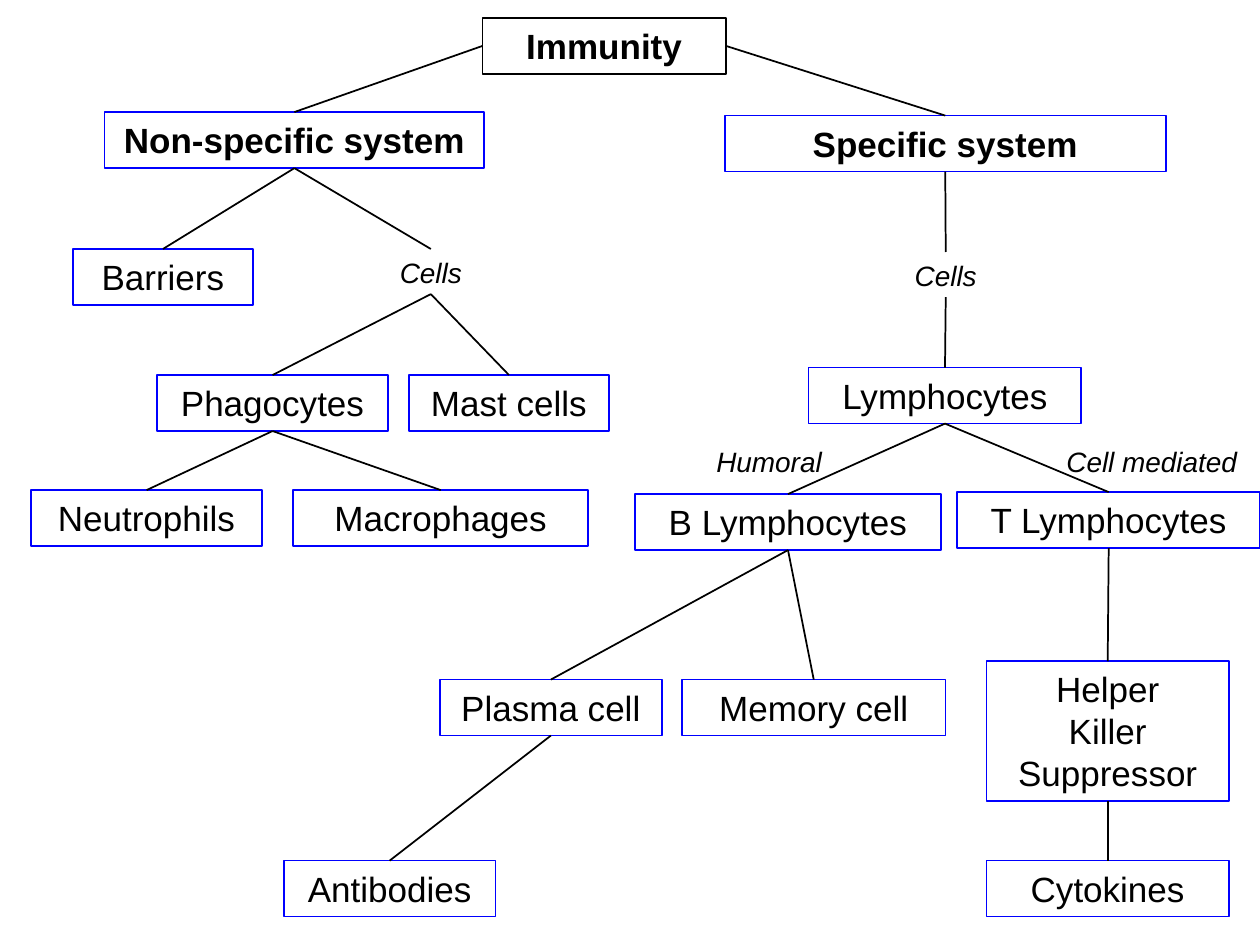
import pptx
import pptx.util
import pptx.dml.color
import pptx.enum.shapes
import pptx.enum.text
import lxml.etree
from pptx.util import Cm

TOP, LEFT, BOTTOM, RIGHT = range(4)
ALIGN = pptx.enum.text.PP_ALIGN
BOX_HEIGHT, LABEL_HEIGHT = 1.13, 0.91

FRAME_FORMAT = {
    "word_wrap": True,
    "auto_size": pptx.enum.text.MSO_AUTO_SIZE.SHAPE_TO_FIT_TEXT,
    "vertical_anchor": pptx.enum.text.MSO_ANCHOR.TOP,
    "margin_left": Cm(0.25), "margin_right": Cm(0.25),
    "margin_top": Cm(0.13), "margin_bottom": Cm(0.13),
}
HEADING_FONT = {"name": "Arial", "size": pptx.util.Pt(20), "bold": True}
CELL_FONT = {"name": "Arial", "size": pptx.util.Pt(20)}
LABEL_FONT = {"name": "Arial", "size": pptx.util.Pt(16), "italic": True}


def rgb(value):
    return pptx.dml.color.RGBColor.from_string(value)


def write(part, text, font, align):
    for name, value in FRAME_FORMAT.items():
        setattr(part.text_frame, name, value)
    part.text_frame.text = text
    for paragraph in part.text_frame.paragraphs:
        paragraph.alignment = align
        for run in paragraph.runs:
            for name, value in font.items():
                setattr(run.font, name, value)
            run.font.color.rgb = rgb("000000")


presentation = pptx.Presentation()
presentation.slide_width, presentation.slide_height = Cm(25.4), Cm(19.05)
slide = presentation.slides.add_slide(presentation.slide_layouts[6])
parts = {}

# Boxes: text, left, top, width, height (cm), font, outline
boxes = [
    ("Immunity", 9.73, 0.36, 4.9, BOX_HEIGHT, HEADING_FONT, "000000"),
    ("Non-specific system", 2.11, 2.26, 7.65, BOX_HEIGHT, HEADING_FONT, "0000FF"),
    ("Specific system", 14.61, 2.33, 8.89, BOX_HEIGHT, HEADING_FONT, "0000FF"),
    ("Barriers", 1.47, 5.02, 3.63, BOX_HEIGHT, CELL_FONT, "0000FF"),
    ("Mast cells", 8.24, 7.56, 4.04, BOX_HEIGHT, CELL_FONT, "0000FF"),
    ("Phagocytes", 3.16, 7.56, 4.67, BOX_HEIGHT, CELL_FONT, "0000FF"),
    ("Neutrophils", 0.62, 9.88, 4.67, BOX_HEIGHT, CELL_FONT, "0000FF"),
    ("Macrophages", 5.91, 9.88, 5.95, BOX_HEIGHT, CELL_FONT, "0000FF"),
    ("Lymphocytes", 16.3, 7.41, 5.5, BOX_HEIGHT, CELL_FONT, "0000FF"),
    ("T Lymphocytes", 19.3, 9.92, 6.1, BOX_HEIGHT, CELL_FONT, "0000FF"),
    ("B Lymphocytes", 12.8, 9.96, 6.17, BOX_HEIGHT, CELL_FONT, "0000FF"),
    ("Antibodies", 5.72, 17.35, 4.27, BOX_HEIGHT, CELL_FONT, "0000FF"),
    ("Helper\nKiller\nSuppressor", 19.89, 13.33, 4.88, 2.82, CELL_FONT, "0000FF"),
    ("Plasma cell", 8.87, 13.7, 4.47, BOX_HEIGHT, CELL_FONT, "0000FF"),
    ("Cytokines", 19.89, 17.35, 4.88, BOX_HEIGHT, CELL_FONT, "0000FF"),
    ("Memory cell", 13.75, 13.7, 5.31, BOX_HEIGHT, CELL_FONT, "0000FF"),
]
for text, left, top, width, height, font, outline in boxes:
    box = slide.shapes.add_shape(pptx.enum.shapes.MSO_SHAPE.RECTANGLE,
                                 Cm(left), Cm(top), Cm(width), Cm(height))
    box.shadow.inherit = False
    box.fill.background()
    box.line.color.rgb = rgb(outline)
    box.line.width = pptx.util.Pt(1)
    write(box, text, font, ALIGN.CENTER)
    parts[text.split("\n")[0]] = box

# Labels: part, text, left, top, width (cm), alignment
labels = [
    ("Non-specific cells", "Cells", 7.4, 5.02, 2.57, ALIGN.CENTER),
    ("Specific cells", "Cells", 17.78, 5.08, 2.57, ALIGN.CENTER),
    ("Humoral", "Humoral", 14.19, 8.84, 2.75, ALIGN.LEFT),
    ("Cell mediated", "Cell mediated", 20.54, 8.84, 4.65, ALIGN.RIGHT),
]
for part, text, left, top, width, align in labels:
    label = slide.shapes.add_textbox(Cm(left), Cm(top), Cm(width), Cm(LABEL_HEIGHT))
    write(label, text, LABEL_FONT, align)
    parts[part] = label

# Branches: parent, side of the parent, children joined at their top
branches = [
    ("Immunity", LEFT, ["Non-specific system"]),
    ("Immunity", RIGHT, ["Specific system"]),
    ("Non-specific system", BOTTOM, ["Barriers", "Non-specific cells"]),
    ("Non-specific cells", BOTTOM, ["Phagocytes", "Mast cells"]),
    ("Phagocytes", BOTTOM, ["Neutrophils", "Macrophages"]),
    ("Specific system", BOTTOM, ["Specific cells"]),
    ("Specific cells", BOTTOM, ["Lymphocytes"]),
    ("Lymphocytes", BOTTOM, ["B Lymphocytes", "T Lymphocytes"]),
    ("B Lymphocytes", BOTTOM, ["Plasma cell", "Memory cell"]),
    ("Plasma cell", BOTTOM, ["Antibodies"]),
    ("T Lymphocytes", BOTTOM, ["Helper"]),
    ("Helper", BOTTOM, ["Cytokines"]),
]
for parent, side, children in branches:
    for child in children:
        branch = slide.shapes.add_connector(
            pptx.enum.shapes.MSO_CONNECTOR.STRAIGHT, Cm(0), Cm(0), Cm(1), Cm(1))
        branch.begin_connect(parts[parent], side)
        branch.end_connect(parts[child], TOP)
        branch.line.color.rgb = rgb("000000")
        branch.line.width = pptx.util.Pt(1)
        lxml.etree.SubElement(branch.element.spPr, pptx.oxml.ns.qn("a:effectLst"))

presentation.save("out.pptx")
